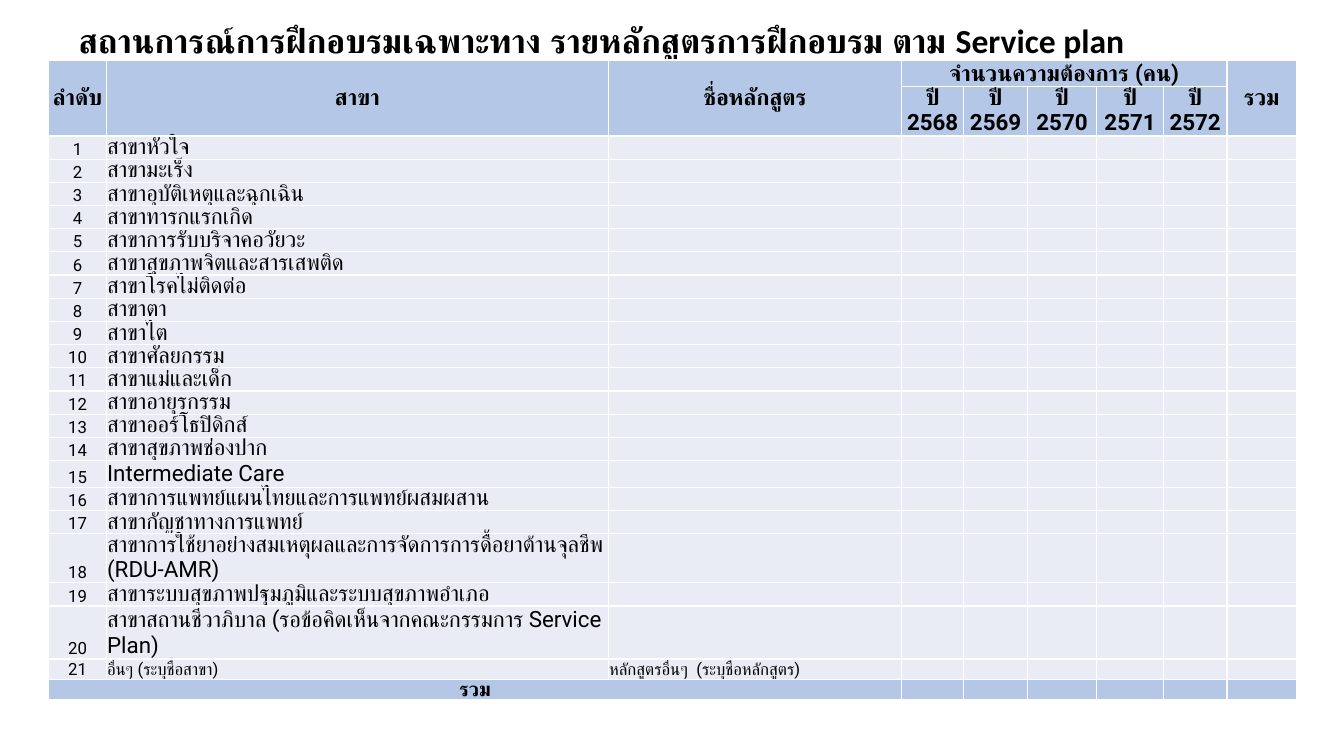
import pptx
import pptx.dml.color
import pptx.enum.text
import pptx.oxml
import pptx.oxml.ns
import pptx.util
from lxml import etree

Cm = pptx.util.Cm
Pt = pptx.util.Pt
ALIGN = pptx.enum.text.PP_ALIGN
ANCHOR = pptx.enum.text.MSO_ANCHOR

COLORS = {"header": "B4C7E7", "body": "E9EBF5", "text": "000000", "border": "FFFFFF"}
COLUMN_WIDTHS = [1.45, 12.65, 7.39, 1.57, 1.6, 1.75, 1.68, 1.6, 1.75]
ROW_HEIGHTS = [0.51] + [0.43] * 21 + [0.33, 0.48]
YEARS = range(2568, 2573)
BRANCHES = [
    "สาขาหัวใจ",
    "สาขามะเร็ง",
    "สาขาอุบัติเหตุและฉุกเฉิน",
    "สาขาทารกแรกเกิด",
    "สาขาการรับบริจาคอวัยวะ",
    "สาขาสุขภาพจิตและสารเสพติด",
    "สาขาโรคไม่ติดต่อ",
    "สาขาตา",
    "สาขาไต",
    "สาขาศัลยกรรม",
    "สาขาแม่และเด็ก",
    "สาขาอายุรกรรม",
    "สาขาออร์โธปิดิกส์",
    "สาขาสุขภาพช่องปาก",
    "Intermediate Care",
    "สาขาการแพทย์แผนไทยและการแพทย์ผสมผสาน",
    "สาขากัญชาทางการแพทย์",
    "สาขาการใช้ยาอย่างสมเหตุผลและการจัดการการดื้อยาต้านจุลชีพ (RDU-AMR)",
    "สาขาระบบสุขภาพปฐมภูมิและระบบสุขภาพอำเภอ",
    "สาขาสถานชีวาภิบาล (รอข้อคิดเห็นจากคณะกรรมการ Service Plan)",
]


def write(frame, text, size=16, font="Roboto", bold=False, align=ALIGN.LEFT, spacing=None):
    paragraph = frame.paragraphs[0]
    paragraph.alignment = align
    paragraph.line_spacing = spacing
    run = paragraph.add_run()
    run.text = text
    run.font.size = Pt(size)
    run.font.name = font
    run.font.bold = bold
    run.font.color.rgb = pptx.dml.color.RGBColor.from_string(COLORS["text"])


class TrainingSlide:
    def __init__(self, deck):
        self.slide = deck.slides.add_slide(deck.slide_layouts[5])

    def title(self, text, left, top, width, height):
        heading = self.slide.shapes.title
        heading.left, heading.top = Cm(left), Cm(top)
        heading.width, heading.height = Cm(width), Cm(height)
        frame = heading.text_frame
        frame.word_wrap = True
        frame.auto_size = pptx.enum.text.MSO_AUTO_SIZE.NONE
        frame.vertical_anchor = ANCHOR.TOP
        write(frame, text, size=24, font="Calibri", bold=True, spacing=0.9)

    def table(self, left, top, widths, heights):
        frame = self.slide.shapes.add_table(
            len(heights), len(widths), Cm(left), Cm(top), Cm(sum(widths)), Cm(sum(heights))
        )
        self.grid = frame.table
        self.grid.first_row = False
        self.grid.horz_banding = False
        for column, width in zip(self.grid.columns, widths):
            column.width = Cm(width)
        for row, height in zip(self.grid.rows, heights):
            row.height = Cm(height)

    def border(self, cell):
        properties = cell._tc.get_or_add_tcPr()
        for position, side in enumerate(("lnL", "lnR", "lnT", "lnB")):
            line = pptx.oxml.parse_xml(
                f'<a:{side} {pptx.oxml.ns.nsdecls("a")} w="12700"><a:solidFill>'
                f'<a:srgbClr val="{COLORS["border"]}"/></a:solidFill></a:{side}>'
            )
            properties.insert(position, line)

    def cell(self, row, column, text="", fill="body", anchor=ANCHOR.MIDDLE, span=(1, 1), **style):
        cell = self.grid.cell(row, column)
        if span != (1, 1):
            cell.merge(self.grid.cell(row + span[0] - 1, column + span[1] - 1))
        cell.margin_left = cell.margin_right = cell.margin_top = Cm(0.02)
        cell.margin_bottom = Cm(0)
        cell.vertical_anchor = anchor
        cell.fill.solid()
        cell.fill.fore_color.rgb = pptx.dml.color.RGBColor.from_string(COLORS[fill])
        self.border(cell)
        if text:
            write(cell.text_frame, text, **style)
        else:
            paragraph = cell.text_frame.paragraphs[0]._p
            etree.SubElement(paragraph, pptx.oxml.ns.qn("a:endParaRPr"), sz="1000")


def main():
    deck = pptx.Presentation()
    deck.slide_width, deck.slide_height = Cm(33.87), Cm(19.05)
    page = TrainingSlide(deck)
    page.table(1.23, 1.51, COLUMN_WIDTHS, ROW_HEIGHTS)
    page.title(
        "สถานการณ์การฝึกอบรมเฉพาะทาง รายหลักสูตรการฝึกอบรม ตาม Service plan",
        1.73, 0.48, 28.96, 1.85,
    )

    total_column = len(COLUMN_WIDTHS) - 1
    total_row = len(ROW_HEIGHTS) - 1
    other_row = total_row - 1
    first_year = 3

    heading = {"fill": "header", "bold": True, "align": ALIGN.CENTER}
    for column, label in ((0, "ลำดับ"), (1, "สาขา"), (2, "ชื่อหลักสูตร"), (total_column, "รวม")):
        page.cell(0, column, label, span=(2, 1), **heading)
    page.cell(0, first_year, "จำนวนความต้องการ (คน)", span=(1, len(YEARS)), **heading)
    for column, year in enumerate(YEARS, first_year):
        page.cell(1, column, f"ปี {year}", **heading)

    for number in range(1, len(BRANCHES) + 2):
        page.cell(number + 1, 0, str(number), anchor=ANCHOR.BOTTOM, size=12, align=ALIGN.CENTER)
        for column in range(first_year, total_column + 1):
            page.cell(number + 1, column)
    for row, branch in enumerate(BRANCHES, 2):
        page.cell(row, 1, branch)
        page.cell(row, 2)

    page.cell(other_row, 1, "อื่นๆ (ระบุชื่อสาขา)", anchor=ANCHOR.BOTTOM, size=12)
    page.cell(other_row, 2, "หลักสูตรอื่นๆ  (ระบุชื่อหลักสูตร)", anchor=ANCHOR.BOTTOM, size=12)
    page.cell(total_row, 0, "รวม", anchor=ANCHOR.BOTTOM, span=(1, 3), size=14, **heading)
    for column in range(first_year, total_column + 1):
        page.cell(total_row, column, fill="header")
    deck.save("out.pptx")


if __name__ == "__main__":
    main()
